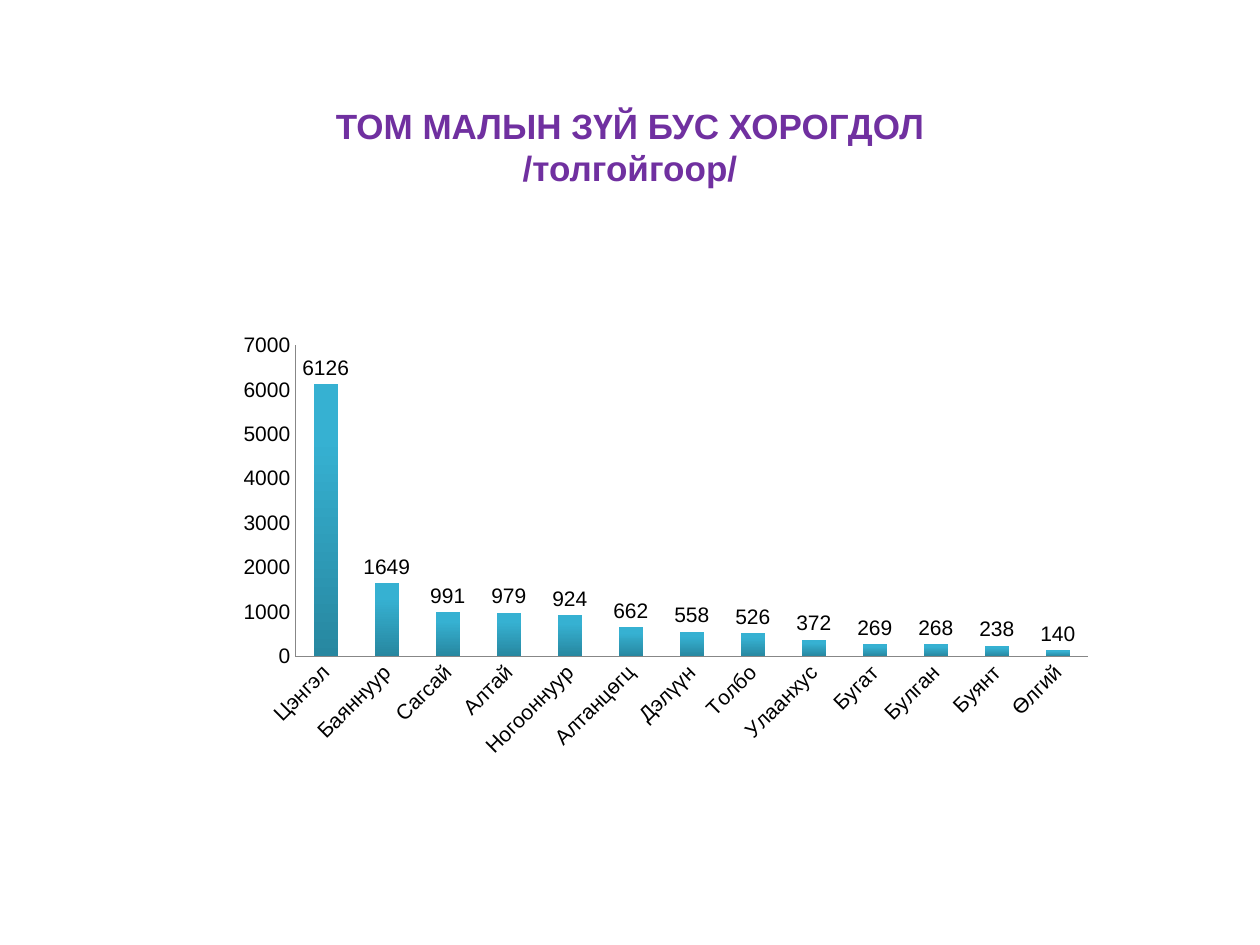
from lxml import etree
from pptx import Presentation
from pptx.chart.data import CategoryChartData
from pptx.dml.color import RGBColor
from pptx.enum.chart import XL_CHART_TYPE as ChartType, XL_LABEL_POSITION as LabelPosition
from pptx.enum.chart import XL_TICK_MARK as TickMark
from pptx.enum.text import MSO_ANCHOR as Anchor, PP_ALIGN as Align
from pptx.oxml.ns import qn
from pptx.util import Cm, Pt

COLORS = {
    "title": "7030A0",
    "text": "000000",
    "axis": "878787",
    "bar_bottom": "2787A0",
    "bar_top": "36B1D2",
}
LOSSES = {
    "Цэнгэл": 6126, "Баяннуур": 1649, "Сагсай": 991, "Алтай": 979,
    "Ногооннуур": 924, "Алтанцөгц": 662, "Дэлүүн": 558, "Толбо": 526,
    "Улаанхус": 372, "Бугат": 269, "Булган": 268, "Буянт": 238, "Өлгий": 140,
}


class SlideBuilder:
    font_name = "Arial"

    def __init__(self, slide):
        self.slide = slide

    def color(self, name):
        return RGBColor.from_string(COLORS[name])

    def style_font(self, font, size, color, bold=False):
        font.name = self.font_name
        font.size = Pt(size)
        font.bold = bold
        font.color.rgb = self.color(color)

    def add_title(self, text, left, top, width, height):
        text_frame = self.slide.shapes.add_textbox(left, top, width, height).text_frame
        text_frame.word_wrap = True
        text_frame.vertical_anchor = Anchor.MIDDLE
        paragraph = text_frame.paragraphs[0]
        paragraph.text = text
        paragraph.alignment = Align.CENTER
        for run in paragraph.runs:
            self.style_font(run.font, 20, "title", bold=True)

    def add_column_chart(self, values, left, top, width, height):
        data = CategoryChartData()
        data.categories = list(values)
        data.add_series("Series 1", list(values.values()))
        chart = self.slide.shapes.add_chart(
            ChartType.COLUMN_CLUSTERED, left, top, width, height, data).chart
        chart.has_title = False
        chart.has_legend = False
        self.style_font(chart.font, 12, "text")
        self.style_axes(chart)

        plot = chart.plots[0]
        plot.vary_by_categories = False
        plot.gap_width = 150
        self.fill_bars(plot.series[0])
        plot.has_data_labels = True
        labels = plot.data_labels
        labels.show_value = True
        labels.position = LabelPosition.OUTSIDE_END
        self.style_font(labels.font, 12, "text")
        return chart

    def style_axes(self, chart):
        for axis in (chart.category_axis, chart.value_axis):
            axis.major_tick_mark = axis.minor_tick_mark = TickMark.NONE
            axis.has_major_gridlines = False
            axis.format.line.color.rgb = self.color("axis")
            axis.format.line.width = Pt(0.75)
            self.style_font(axis.tick_labels.font, 12, "text")
        chart.value_axis.minimum_scale = 0
        chart.value_axis.maximum_scale = 7000
        chart.value_axis.major_unit = 1000
        category_text = chart.category_axis._element.find(qn("c:txPr"))
        category_text.find(qn("a:bodyPr")).set("rot", str(-45 * 60000))

    def fill_bars(self, series):
        fill = series.format.fill
        fill.gradient()
        fill.gradient_angle = 90
        stops = zip(fill.gradient_stops, ("bar_bottom", "bar_top"), (0, 0.8))
        for stop, color, position in stops:
            stop.color.rgb = self.color(color)
            stop.position = position

    def place_plot(self, chart, **fractions):
        """Fix the inner plot area as fractions (x, y, w, h) of the chart."""
        plot_area = chart._chartSpace.find(".//" + qn("c:plotArea"))
        for layout in plot_area.findall(qn("c:layout")):
            plot_area.remove(layout)
        layout = etree.Element(qn("c:layout"))
        manual = etree.SubElement(layout, qn("c:manualLayout"))
        settings = {"layoutTarget": "inner", "xMode": "edge", "yMode": "edge", **fractions}
        for name, value in settings.items():
            etree.SubElement(manual, qn("c:" + name)).set("val", str(value))
        plot_area.insert(0, layout)


def main():
    presentation = Presentation()
    presentation.slide_width = Cm(25.4)
    presentation.slide_height = Cm(19.05)
    slide = presentation.slides.add_slide(presentation.slide_layouts[6])
    builder = SlideBuilder(slide)
    builder.add_title("ТОМ МАЛЫН ЗҮЙ БУС ХОРОГДОЛ\n/толгойгоор/",
                      Cm(1.27), Cm(1.47), Cm(22.86), Cm(2.97))
    chart = builder.add_column_chart(LOSSES, Cm(4.24), Cm(5.74), Cm(18.21), Cm(10.57))
    builder.place_plot(chart, x=0.094, y=0.116, w=0.878, h=0.593)
    presentation.save("out.pptx")


if __name__ == "__main__":
    main()
